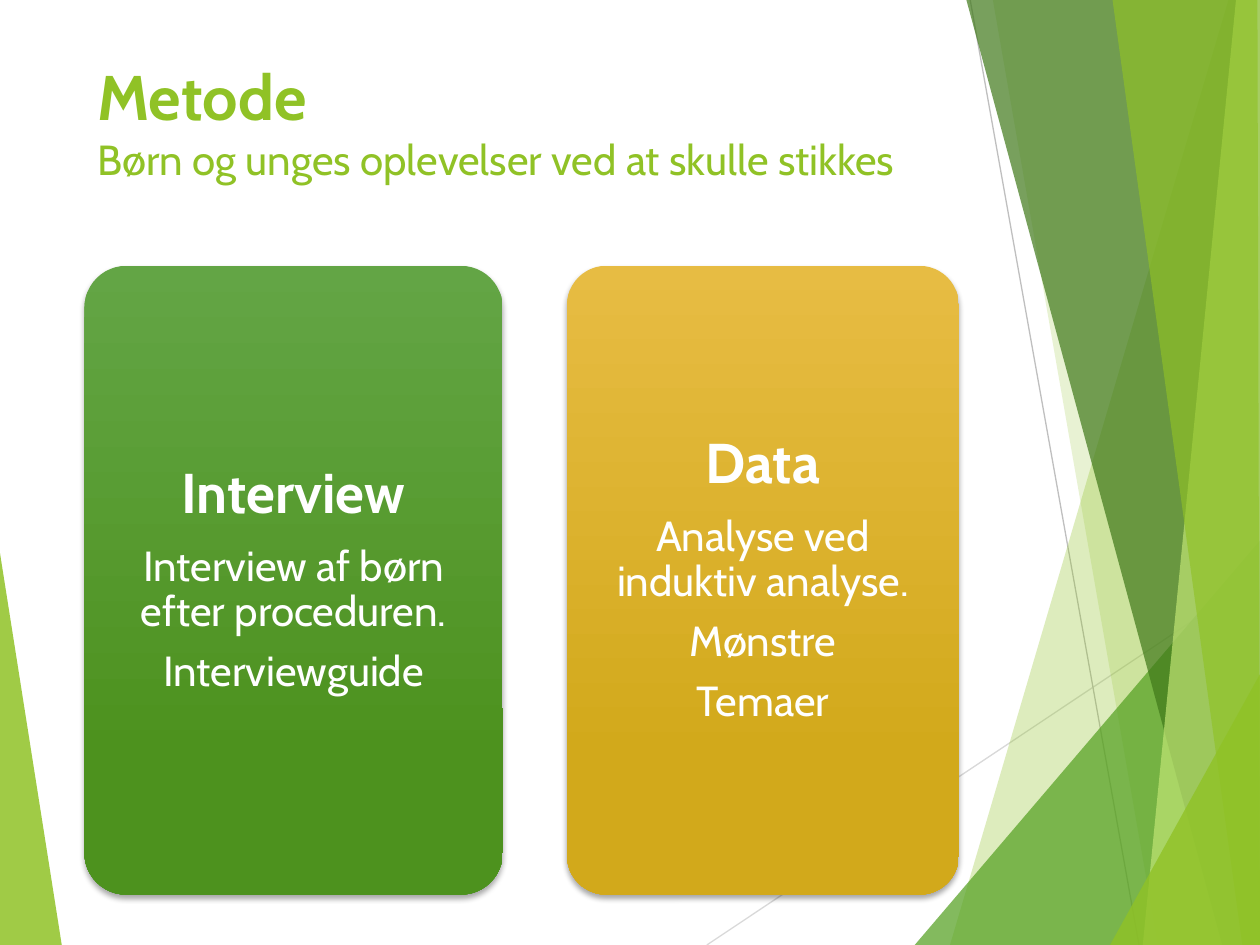
from dataclasses import dataclass

from lxml.etree import SubElement
from pptx import Presentation
from pptx.dml.color import RGBColor
from pptx.enum.shapes import MSO_CONNECTOR, MSO_SHAPE
from pptx.enum.text import MSO_ANCHOR, MSO_AUTO_SIZE, PP_ALIGN
from pptx.oxml.ns import qn
from pptx.util import Inches, Pt


@dataclass(frozen=True)
class Theme:
    font: str = "Cabin"
    lime: str = "90C226"
    green: str = "54A021"
    dark_green: str = "3F7819"
    pale_lime: str = "C0E474"
    light_gray: str = "D9D9D9"
    gray: str = "BFBFBF"
    white: str = "FFFFFF"
    green_gradient: tuple = ("63A545", "4D921E")
    gold_gradient: tuple = ("E7BC43", "D2A91B")
    title_size: int = 36
    heading_size: int = 32
    text_size: int = 24


theme = Theme()


def add_text(paragraph, text, *, size, color, bold=False):
    run = paragraph.add_run()
    run.text = text
    run.font.name = theme.font
    run.font.size = Pt(size)
    run.font.bold = bold
    run.font.color.rgb = RGBColor.from_string(color)


presentation = Presentation()
presentation.slide_width = Inches(10)
presentation.slide_height = Inches(7.5)
slide = presentation.slides.add_slide(presentation.slide_layouts[5])

left_facet = ([(0, 4.39), (0.49, 7.5), (0, 7.5)], theme.lime, 85)
right_facets = [
    ([(9.75, 0), (7.54, 7.5), (10, 7.5), (10, 0)], theme.lime, 30),
    ([(7.88, 0), (9.19, 7.5), (10, 7.5), (10, 0)], theme.lime, 20),
    ([(7.26, 7.5), (10, 4.29), (10, 7.5)], theme.green, 72),
    ([(7.67, 0), (9.7, 7.5), (10, 7.5), (10, 0)], theme.dark_green, 70),
    ([(9.81, 0), (9.07, 7.5), (10, 7.5), (10, 0)], theme.pale_lime, 70),
    ([(8.83, 0), (9.86, 7.5), (10, 7.5), (9.98, 0)], theme.lime, 65),
    ([(8.81, 7.5), (10, 5.35), (10, 7.5)], theme.lime, 80),
]
lines = [
    ((5.61, 7.5), (10, 4.57), theme.light_gray),
    ((7.7, 0), (9.04, 7.5), theme.gray),
]

for start, end, color in lines:
    connector = slide.shapes.add_connector(
        MSO_CONNECTOR.STRAIGHT, *[Inches(value) for value in start + end]
    )
    connector.line.color.rgb = RGBColor.from_string(color)
    connector.line.width = Pt(0.75)
    SubElement(connector.element.spPr, qn("a:effectLst"))

for points, color, opacity in [left_facet, *right_facets]:
    corners = [(Inches(x), Inches(y)) for x, y in points]
    builder = slide.shapes.build_freeform(*corners[0])
    builder.add_line_segments(corners[1:], close=True)
    facet = builder.convert_to_shape()
    facet.shadow.inherit = False
    facet.line.fill.background()
    facet.fill.solid()
    facet.fill.fore_color.rgb = RGBColor.from_string(color)
    color_element = facet.element.spPr.find(f"{qn('a:solidFill')}/{qn('a:srgbClr')}")
    SubElement(color_element, qn("a:alpha"), val=str(opacity * 1000))

title = slide.shapes.title
title.left, title.top = Inches(0.67), Inches(0.41)
title.width, title.height = Inches(6.94), Inches(1.98)
title.text_frame.word_wrap = True
title.text_frame.auto_size = MSO_AUTO_SIZE.NONE
title.text_frame.vertical_anchor = MSO_ANCHOR.TOP
paragraph = title.text_frame.paragraphs[0]
paragraph.alignment = PP_ALIGN.LEFT
add_text(paragraph, "Metode", size=theme.title_size, color=theme.lime, bold=True)
paragraph.add_line_break()
line_break = paragraph._p.find(qn("a:br"))
SubElement(line_break, qn("a:rPr"), sz=str(theme.title_size * 100))
add_text(
    paragraph,
    "Børn og unges oplevelser ved at skulle stikkes",
    size=theme.text_size,
    color=theme.lime,
)

cards = [
    (0.67, 3.32, theme.green_gradient,
     ["Interview", "Interview af børn efter proceduren.", "Interviewguide"]),
    (4.5, 3.11, theme.gold_gradient,
     ["Data", "Analyse ved induktiv analyse.", "Mønstre", "Temaer"]),
]
for left, width, gradient, texts in cards:
    card = slide.shapes.add_shape(
        MSO_SHAPE.ROUNDED_RECTANGLE,
        Inches(left), Inches(2.11), Inches(width), Inches(4.99),
    )
    card.adjustments[0] = 0.1
    card.line.fill.background()
    card.fill.gradient()
    card.fill.gradient_angle = 270
    for stop, position, color in zip(card.fill.gradient_stops, (0, 0.78), gradient):
        stop.position = position
        stop.color.rgb = RGBColor.from_string(color)

    card.shadow.inherit = False
    effects = card.element.spPr.find(qn("a:effectLst"))
    shadow = SubElement(
        effects, qn("a:outerShdw"),
        blurRad=str(Pt(3)), dist=str(Pt(2)), dir="5400000", rotWithShape="0",
    )
    shadow_color = SubElement(shadow, qn("a:srgbClr"), val="000000")
    SubElement(shadow_color, qn("a:alpha"), val="35000")

    frame = card.text_frame
    frame.word_wrap = True
    frame.vertical_anchor = MSO_ANCHOR.MIDDLE
    frame.margin_left = frame.margin_right = Inches(0.07)
    frame.margin_top = frame.margin_bottom = Inches(0.04)
    for index, text in enumerate(texts):
        heading = index == 0
        size = theme.heading_size if heading else theme.text_size
        paragraph = frame.paragraphs[0] if heading else frame.add_paragraph()
        paragraph.alignment = PP_ALIGN.CENTER
        paragraph.line_spacing = 0.9
        paragraph.space_after = Pt(round(size * 0.35, 1))
        add_text(paragraph, text, size=size, color=theme.white, bold=heading)

presentation.save("out.pptx")
